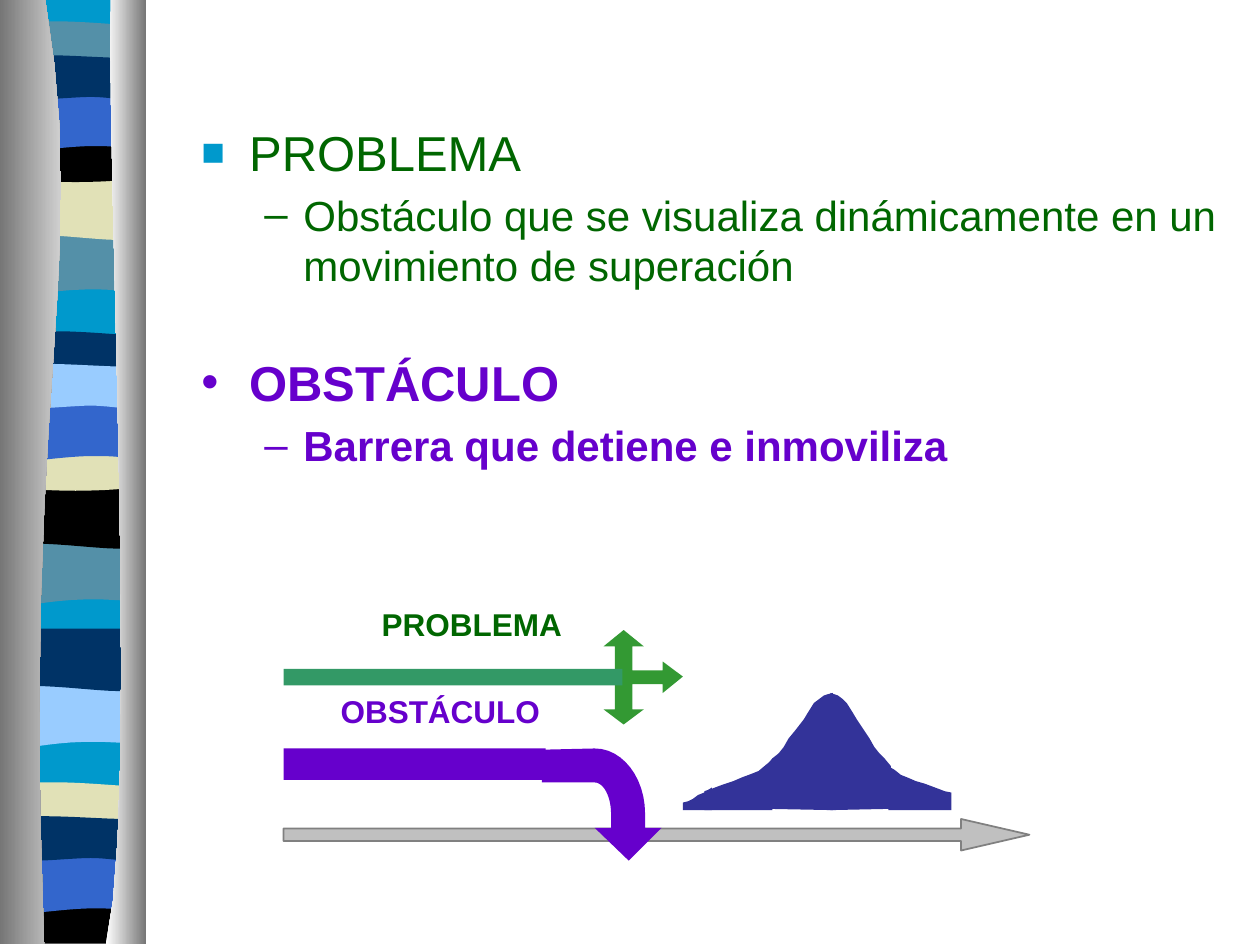
from lxml.etree import SubElement
from pptx import Presentation
from pptx.dml.color import RGBColor
from pptx.enum.shapes import MSO_SHAPE as Preset
from pptx.enum.text import MSO_ANCHOR as Anchor, MSO_AUTO_SIZE as AutoSize, PP_ALIGN as Align
from pptx.oxml.ns import qn
from pptx.util import Inches, Pt

GREEN, PURPLE, CYAN = "006600", "6600CC", "0099CC"
LEFT, RIGHT = 0.05, 1.14
FOOT = 7.49

WAVES = {
    "dip": [(RIGHT, 0), (RIGHT, 0.47), (0.39, 0.39, 0.24, 0.55, LEFT, 0.47), (LEFT, 0)],
    "swell": [(RIGHT, 0), (RIGHT, 0.47), (0.96, 0.55, 0.39, 0.41, LEFT, 0.47), (LEFT, 0)],
    "lens": [(RIGHT, 0.05), (RIGHT, 0.29), (0.96, 0.34, 0.24, 0.34, LEFT, 0.29), (LEFT, 0.05),
             (0.12, 0, 0.29, 0.01, 0.47, 0.01), (0.65, 0.01, 1, 0.04, RIGHT, 0.05)],
    "bowl": [(RIGHT, 0), (RIGHT, 0.32), (0.96, 0.38, 0.24, 0.38, LEFT, 0.32), (LEFT, 0),
             (0.72, 0.05, 0.91, 0, RIGHT, 0)],
    "arch": [(RIGHT, 0), (RIGHT, 0.47), (0.97, 0.42, 0.9, 0.42, 0.72, 0.42),
             (0.54, 0.42, 0.22, 0.47, LEFT, 0.47), (LEFT, 0)],
    "ripple": [(RIGHT, 0.05), (RIGHT, 0.36), (1.07, 0.41, 0.9, 0.36, 0.72, 0.36),
               (0.54, 0.36, 0.17, 0.41, LEFT, 0.36), (LEFT, 0.05),
               (0.21, 0, 0.79, 0.05, 0.97, 0.05)],
    "full": [(RIGHT, 0), (RIGHT, 7.47), (LEFT, 7.47), (LEFT, 0)],
    "base": [(RIGHT, 0), (RIGHT, 0.37), (LEFT, 0.37), (LEFT, 0), (0.72, 0.05, 0.91, 0, RIGHT, 0)],
}
BANDS = [
    ("full", 0, CYAN), ("dip", 1.85, "5490A8"), ("swell", 1.41, "E1E1B7"),
    ("lens", 0.16, "5490A8"), ("bowl", 1.08, "000000"), ("arch", 0.74, "3366CC"),
    ("ripple", 0.41, "003366"), ("dip", 4.31, "5490A8"), ("swell", 3.86, "000000"),
    ("lens", 2.62, "003366"), ("bowl", 3.53, "E1E1B7"), ("arch", 3.2, "3366CC"),
    ("ripple", 2.86, "99CCFF"), ("dip", 5.44, "99CCFF"), ("swell", 4.99, "003366"),
    ("lens", 6.2, "E1E1B7"), ("base", 7.12, "000000"), ("arch", 6.79, "3366CC"),
    ("ripple", 6.45, "003366"),
]
PILLARS = [
    ([(0.36, 0), (0.72, 2.16, 0.17, 2.96, 0.35, FOOT), (0, FOOT), (0, 0)], ("767676", "D0D0D0")),
    ([(0.88, 0), (0.84, 1.25, 1.11, 6.46, 0.84, FOOT), (1.16, FOOT), (1.16, 0)],
     ("FFFFFF", "767676")),
]
MOUNTAIN = [
    [(5.59, 6.28), (5.59, 6.43), (6.13, 6.43), (6.13, 6.03), (6.08, 6.07), (6.02, 6.12),
     (5.97, 6.14), (5.89, 6.17), (5.82, 6.2), (5.73, 6.23), (5.65, 6.26)],
    [(6.61, 5.5), (6.61, 6.43), (6.08, 6.42), (6.08, 6.08), (6.13, 6.02), (6.18, 5.98),
     (6.22, 5.93), (6.26, 5.86), (6.31, 5.8), (6.38, 5.71), (6.41, 5.66), (6.46, 5.58),
     (6.5, 5.55), (6.54, 5.52), (6.57, 5.51)],
    [(5.42, 6.37), (5.42, 6.43), (5.65, 6.43), (5.65, 6.25), (5.62, 6.27), (5.59, 6.29),
     (5.54, 6.31), (5.5, 6.34), (5.46, 6.36)],
    [(7.55, 6.29), (7.55, 6.43), (7.05, 6.43), (7.05, 6.08), (7.1, 6.11), (7.15, 6.15),
     (7.2, 6.17), (7.27, 6.2), (7.34, 6.22), (7.42, 6.25), (7.5, 6.28)],
    [(6.59, 5.5), (6.59, 6.43), (7.07, 6.42), (7.07, 6.08), (7.02, 6.02), (6.98, 5.98),
     (6.94, 5.93), (6.9, 5.86), (6.86, 5.8), (6.8, 5.71), (6.77, 5.66), (6.72, 5.58),
     (6.69, 5.55), (6.65, 5.52), (6.62, 5.51)],
]
THREE_WAY_ARROW = [
    (5.42, 5.37), (5.26, 5.25), (5.26, 5.32), (5.02, 5.32), (5.02, 5.13), (5.11, 5.13),
    (4.95, 5), (4.79, 5.13), (4.88, 5.13), (4.88, 5.63), (4.79, 5.63), (4.95, 5.75),
    (5.11, 5.63), (5.02, 5.63), (5.02, 5.43), (5.26, 5.43), (5.26, 5.5),
]
BENT_ARROW = [
    (4.99, 6.83), (5.25, 6.57), (5.12, 6.57), (5.12, 6.46), (5.12, 6.17, 4.94, 5.94, 4.72, 5.94),
    (4.3, 5.95), (4.3, 6.21), (4.72, 6.21), (4.79, 6.21, 4.85, 6.32, 4.85, 6.46),
    (4.85, 6.57), (4.72, 6.57),
]
DEFINITIONS = [
    (0.92, GREEN, False, ("■", CYAN, 80), "PROBLEMA",
     "Obstáculo que se visualiza dinámicamente en un movimiento de superación"),
    (2.75, PURPLE, True, ("•", None, None), "OBSTÁCULO", "Barrera que detiene e inmoviliza"),
]
LABELS = [("PROBLEMA", 2.83, 4.75, GREEN), ("OBSTÁCULO", 2.58, 5.44, PURPLE)]


def rgb(value):
    return RGBColor.from_string(value)


def flatten(outline, steps=12):
    points = []
    for part in outline:
        if len(part) == 2:
            points.append(part)
            continue
        corners = [points[-1], part[:2], part[2:4], part[4:]]
        for step in range(1, steps + 1):
            t = step / steps
            weights = ((1 - t) ** 3, 3 * t * (1 - t) ** 2, 3 * t * t * (1 - t), t ** 3)
            points.append(tuple(sum(w * c[axis] for w, c in zip(weights, corners))
                                for axis in (0, 1)))
    return points


def paint(shape, color):
    shape.shadow.inherit = False
    shape.line.fill.background()
    shape.fill.solid()
    shape.fill.fore_color.rgb = rgb(color)
    return shape


def add_outline(page, outline, color):
    start, *rest = [(Inches(x), Inches(y)) for x, y in flatten(outline)]
    builder = page.shapes.build_freeform(*start)
    builder.add_line_segments(rest, close=True)
    return paint(builder.convert_to_shape(), color)


def add_preset(page, kind, place, color):
    return paint(page.shapes.add_shape(kind, *map(Inches, place)), color)


def add_box(page, *place):
    box = page.shapes.add_textbox(*map(Inches, place))
    box.text_frame.word_wrap = True
    return box.text_frame


def add_span(para, text, size, color, bold):
    span = para.add_run()
    span.text = text
    span.font.name, span.font.size, span.font.bold = "Arial", Pt(size), bold
    span.font.color.rgb = rgb(color)


def set_bullet(para, margin, hanging, mark, color=None, percent=None):
    props = para._p.get_or_add_pPr()
    props.set("marL", str(Inches(margin)))
    props.set("indent", str(-Inches(hanging)))
    SubElement(SubElement(props, qn("a:spcBef")), qn("a:spcPct"), val="20000")
    if color:
        SubElement(SubElement(props, qn("a:buClr")), qn("a:srgbClr"), val=color)
    if percent:
        SubElement(props, qn("a:buSzPct"), val=str(percent * 1000))
    SubElement(props, qn("a:buFont"), typeface="Arial")
    SubElement(props, qn("a:buChar"), char=mark)


def add_definition(page, top, color, bold, bullet, term, meaning):
    frame = add_box(page, 1.5, top, 8.5, 1.5)
    para = frame.paragraphs[0]
    set_bullet(para, 0.38, 0.38, *bullet)
    add_span(para, term, 28, color, bold)
    para = frame.add_paragraph()
    para.level = 1
    set_bullet(para, 0.81, 0.31, "–")
    add_span(para, meaning, 24, color, bold)


def add_label(page, text, left, top, color):
    frame = add_box(page, left, top, 1.83, 0.4)
    frame.vertical_anchor = Anchor.MIDDLE
    frame.auto_size = AutoSize.SHAPE_TO_FIT_TEXT
    para = frame.paragraphs[0]
    para.alignment = Align.CENTER
    add_span(para, text, 18, color, True)


def main():
    """Build the slide that contrasts a problem with an obstacle."""
    deck = Presentation()
    deck.slide_width, deck.slide_height = Inches(10), Inches(7.5)
    page = deck.slides.add_slide(deck.slide_layouts[6])
    for wave, top, color in BANDS:
        add_outline(page, [tuple(v + top * (i % 2) for i, v in enumerate(part))
                           for part in WAVES[wave]], color)
    for outline, colors in PILLARS:
        fill = add_outline(page, outline, colors[0]).fill
        fill.gradient()
        fill.gradient_angle = 0
        for stop, color, position in zip(fill.gradient_stops, colors, (0, 1)):
            stop.color.rgb, stop.position = rgb(color), position
    for definition in DEFINITIONS:
        add_definition(page, *definition)
    for slope in MOUNTAIN:
        add_outline(page, slope, "333399")
    path_arrow = add_preset(page, Preset.RIGHT_ARROW, (2.25, 6.5, 5.92, 0.25), "C0C0C0")
    path_arrow.adjustments[0], path_arrow.adjustments[1] = 0.4, 2.17
    path_arrow.line.color.rgb, path_arrow.line.width = rgb("808080"), Pt(1)
    add_outline(page, THREE_WAY_ARROW, "339933")
    add_preset(page, Preset.RECTANGLE, (2.25, 5.31, 2.69, 0.13), "339966")
    add_outline(page, BENT_ARROW, PURPLE)
    add_preset(page, Preset.RECTANGLE, (2.25, 5.94, 2.08, 0.25), PURPLE)
    for label in LABELS:
        add_label(page, *label)
    deck.save("out.pptx")


if __name__ == "__main__":
    main()
